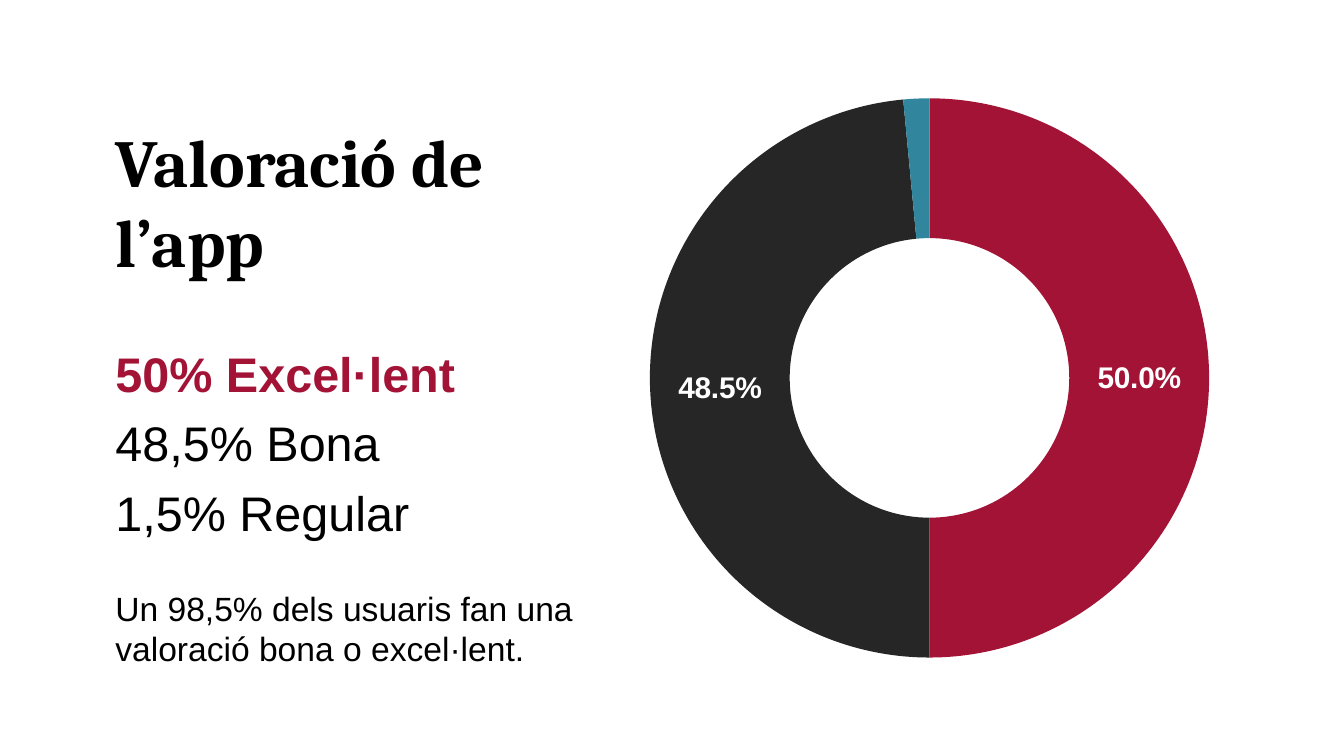
import pptx
import pptx.util
import pptx.chart.data
import pptx.enum.chart
import pptx.dml.color
import lxml.etree

PX = 9525  # EMU per px, 96 px to the inch
COLORS = {"red": "A31336", "dark": "262626", "teal": "31859C",
          "black": "000000", "white": "FFFFFF"}


def rgb(name):
    return pptx.dml.color.RGBColor.from_string(COLORS[name])


def set_font(font, size, color, **values):
    font.size = pptx.util.Pt(size)
    font.color.rgb = rgb(color)
    for key, value in values.items():
        setattr(font, key, value)


prs = pptx.Presentation()
prs.slide_width, prs.slide_height = 960 * PX, 540 * PX
s = prs.slides.add_slide(prs.slide_layouts[6])

# Doughnut chart of the ratings
data = pptx.chart.data.CategoryChartData()
data.categories = ["1", "2", "3"]
data.add_series("Series 1", [50, 48.5, 1.5])
box = [v * PX for v in (368, 57, 592, 426)]
chart = s.shapes.add_chart(pptx.enum.chart.XL_CHART_TYPE.DOUGHNUT, *box, data).chart
chart.has_legend = False
chart.has_title = False
set_font(chart.font, 18, "black", name="Calibri")
plot = chart.plots[0]
plot.vary_by_categories = True
series = plot.series[0]
for i, color in enumerate(("red", "dark", "teal")):
    fill = series.points[i].format.fill
    fill.solid()
    fill.fore_color.rgb = rgb(color)

# Percentage labels, none on the smallest slice
labels = series.data_labels
formats = {"show_percentage": True, "show_value": False,
           "number_format": "0.0%", "number_format_is_linked": False}
for key, value in formats.items():
    setattr(labels, key, value)
set_font(labels.font, 16, "white", name="Arial", bold=True)
C = "{http://schemas.openxmlformats.org/drawingml/2006/chart}"
hidden = lxml.etree.Element(C + "dLbl")
lxml.etree.SubElement(hidden, C + "idx", val="2")
lxml.etree.SubElement(hidden, C + "delete", val="1")
labels._element.insert(0, hidden)
plot._element.find(C + "holeSize").set("val", "50")

# Text blocks: box, font, size, space before, lines of (text, colour, bold)
blocks = [
    ((73, 81, 340, 139), "Cambria", 36, 4, [("Valoració de l’app", "black", True)]),
    ((73, 241, 428, 217), "Arial", 26, 6, [("50% Excel·lent", "red", True),
                                           ("48,5% Bona", "black", False),
                                           ("1,5% Regular", "black", False)]),
    ((73, 415, 383, 70), "Arial", 18, 2,
     [("Un 98,5% dels usuaris fan una valoració bona o excel·lent.", "black", False)]),
]
for box, name, size, before, lines in blocks:
    tf = s.shapes.add_textbox(*[v * PX for v in box]).text_frame
    tf.word_wrap = True
    for i, (text, color, bold) in enumerate(lines):
        p = tf.paragraphs[0] if i == 0 else tf.add_paragraph()
        p.space_before = pptx.util.Pt(before)
        r = p.add_run()
        r.text = text
        set_font(r.font, size, color, name=name, bold=bold)

prs.save("out.pptx")
